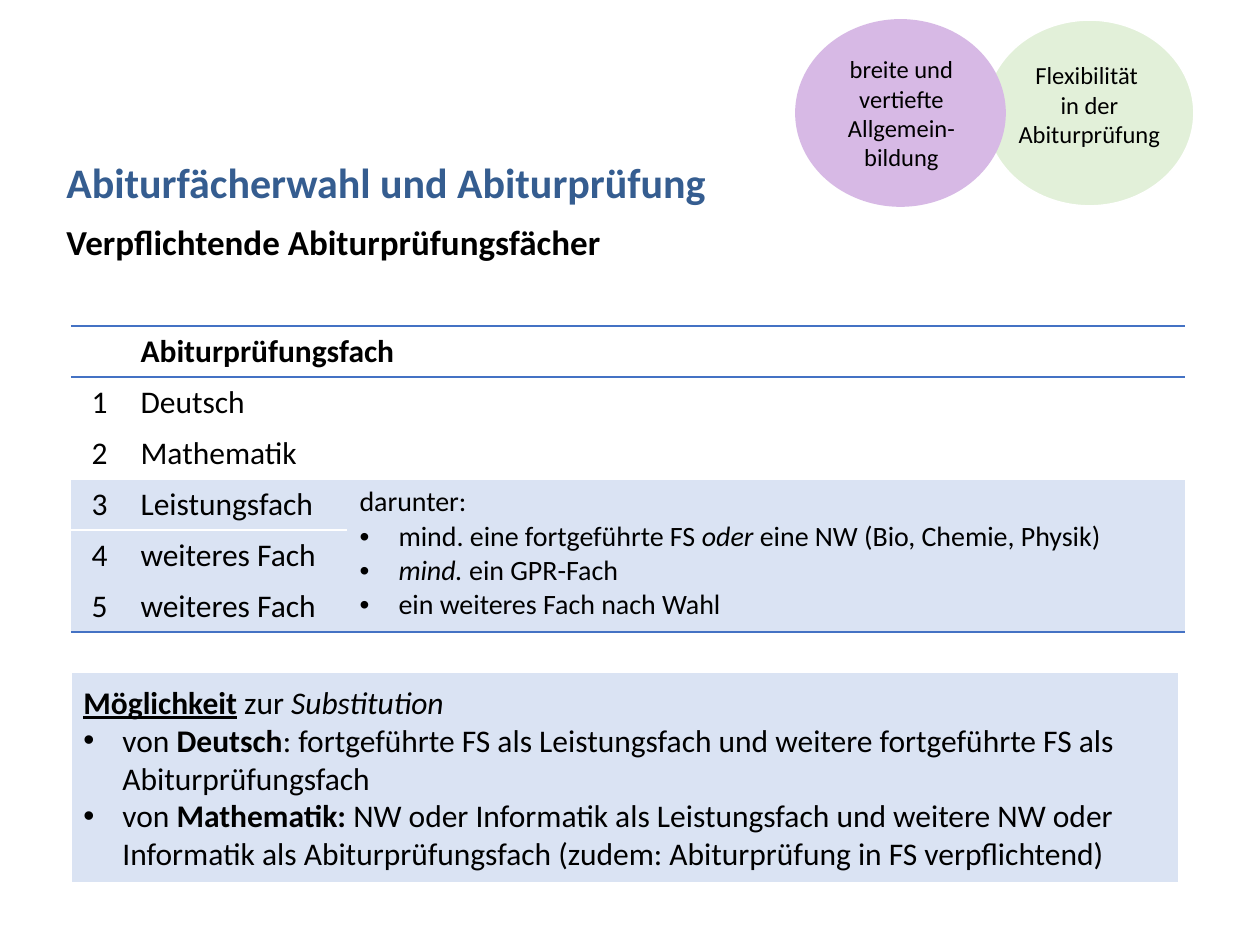
from pptx import Presentation
from pptx.util import Pt
from pptx.dml.color import RGBColor
from pptx.enum.shapes import MSO_SHAPE
from pptx.enum.text import MSO_ANCHOR, PP_ALIGN
from pptx.oxml.ns import qn
from lxml.etree import SubElement

PX = 7257  # EMU per px at 126 px to the inch
FONT = "Calibri"
BLACK, WHITE, NAVY = "000000", "FFFFFF", "355D90"
PALE, BLUE, GREEN, LILAC = "DAE3F3", "4472C4", "E2F0D9", "D7B9E5"

# Content: a paragraph is (bullet, runs), a run is (text, style letters)
TITLE = [(False, [("Abiturfächerwahl und Abiturprüfung", "b")])]
SUB = [(False, [("Verpflichtende Abiturprüfungsfächer", "b")])]
FLEX = [(False, [("Flexibilität \vin der Abiturprüfung", "")])]
BROAD = [(False, [("breite und vertiefte Allgemein-bildung", "")])]
HEAD = "Abiturprüfungsfach"
EXAMS = ["Deutsch", "Mathematik", "Leistungsfach", "weiteres Fach", "weiteres Fach"]
RULES = [
    (False, [("darunter:", "")]),
    (True, [("mind. eine fortgeführte FS ", ""), ("oder", "i"),
            (" eine NW (Bio, Chemie, Physik)", "")]),
    (True, [("mind. ", "i"), ("ein GPR-Fach", "")]),
    (True, [("ein weiteres Fach nach Wahl", "")]),
]
SWAP = [
    (False, [("Möglichkeit", "bu"), (" zur ", ""), ("Substitution", "i")]),
    (True, [("von ", ""), ("Deutsch", "b"),
            (": fortgeführte FS als Leistungsfach und weitere fortgeführte FS als "
             "Abiturprüfungsfach", "")]),
    (True, [("von ", ""), ("Mathematik:", "b"),
            (" NW oder Informatik als Leistungsfach und weitere NW oder Informatik als "
             "Abiturprüfungsfach (zudem: Abiturprüfung in FS verpflichtend)", "")]),
]
COLS, ROW = (57, 219, 838), 51


def px(*vals):
    return [round(v * PX) for v in vals]


def rgb(code):
    return RGBColor.from_string(code)


def write(frame, paras, size, color=BLACK, align=PP_ALIGN.LEFT):
    frame.word_wrap = True
    for n, (dot, runs) in enumerate(paras):
        para = frame.add_paragraph() if n else frame.paragraphs[0]
        para.alignment = align
        if dot:
            props = para._p.get_or_add_pPr()
            indent = px(39)[0]
            props.set("marL", str(indent))
            props.set("indent", str(-indent))
            SubElement(props, qn("a:buFont")).set("typeface", "Arial")
            SubElement(props, qn("a:buChar")).set("char", "•")
        for text, style in runs:
            for k, part in enumerate(text.split("\v")):
                if k:
                    para.add_line_break()
                run = para.add_run()
                run.text = part
                font = run.font
                font.name, font.size = FONT, Pt(size)
                font.color.rgb = rgb(color)
                font.bold, font.italic = "b" in style, "i" in style
                font.underline = "u" in style


def label(box, paras, size, color=BLACK, align=PP_ALIGN.LEFT):
    write(slide.shapes.add_textbox(*px(*box)).text_frame, paras, size, color, align)


def block(kind, box, fill, edge):
    shape = slide.shapes.add_shape(kind, *px(*box))
    shape.shadow.inherit = False
    shape.fill.solid()
    shape.fill.fore_color.rgb = rgb(fill)
    shape.line.color.rgb = rgb(edge)
    shape.line.width = Pt(1)
    return shape


def border(cell, top, bottom):
    props = cell._tc.get_or_add_tcPr()
    edges = (("a:lnL", None), ("a:lnR", None), ("a:lnT", top), ("a:lnB", bottom))
    for n, (tag, color) in enumerate(edges):
        line = props.makeelement(qn(tag), {"w": str(Pt(1))})
        props.insert(n, line)
        if color:
            fill = SubElement(line, qn("a:solidFill"))
            SubElement(fill, qn("a:srgbClr")).set("val", color)
        else:
            SubElement(line, qn("a:noFill"))


prs = Presentation()
prs.slide_width, prs.slide_height = px(1260, 945)
slide = prs.slides.add_slide(prs.slide_layouts[6])

# Headings
label((54, 150, 1181, 110), TITLE, 24, NAVY)
label((54, 214, 1140, 55), SUB, 20)

# Table of exam subjects
rows = len(EXAMS) + 1
table = slide.shapes.add_table(rows, len(COLS), *px(71, 326, sum(COLS), ROW * rows)).table
table.first_row = table.horz_banding = False
for col, width in zip(table.columns, px(*COLS)):
    col.width = width
for row in table.rows:
    row.height = px(ROW)[0]
table.cell(0, 1).merge(table.cell(0, 2))
table.cell(3, 2).merge(table.cell(5, 2))

# Edge colours from the top of the table to its foot
lines = [BLUE, BLUE, None, WHITE, WHITE, None, BLUE]
for r in range(rows):
    for c in range(len(COLS)):
        cell = table.cell(r, c)
        cell.fill.solid()
        cell.fill.fore_color.rgb = rgb(PALE if r > 2 else WHITE)
        top, foot = lines[r], lines[r + 1]
        if c == 2 and r > 2:
            top, foot = (WHITE if r == 3 else None), BLUE
        border(cell, top, foot)

write(table.cell(0, 1).text_frame, [(False, [(HEAD, "b")])], 18)
for n, exam in enumerate(EXAMS, 1):
    write(table.cell(n, 0).text_frame, [(False, [(str(n), "")])], 18, align=PP_ALIGN.CENTER)
    write(table.cell(n, 1).text_frame, [(False, [(exam, "")])], 18)
write(table.cell(3, 2).text_frame, RULES, 16)

# Green circle, behind the lilac one
block(MSO_SHAPE.OVAL, (985, 20, 209, 186), GREEN, WHITE)
label((1000, 54, 179, 102), FLEX, 14, align=PP_ALIGN.CENTER)

# Substitution box
panel = block(MSO_SHAPE.RECTANGLE, (71, 672, 1108, 211), PALE, WHITE)
panel.text_frame.vertical_anchor = MSO_ANCHOR.MIDDLE
write(panel.text_frame, SWAP, 18)

# Lilac circle
block(MSO_SHAPE.OVAL, (796, 20, 209, 186), LILAC, LILAC)
label((819, 48, 165, 131), BROAD, 14, align=PP_ALIGN.CENTER)

prs.save("out.pptx")
